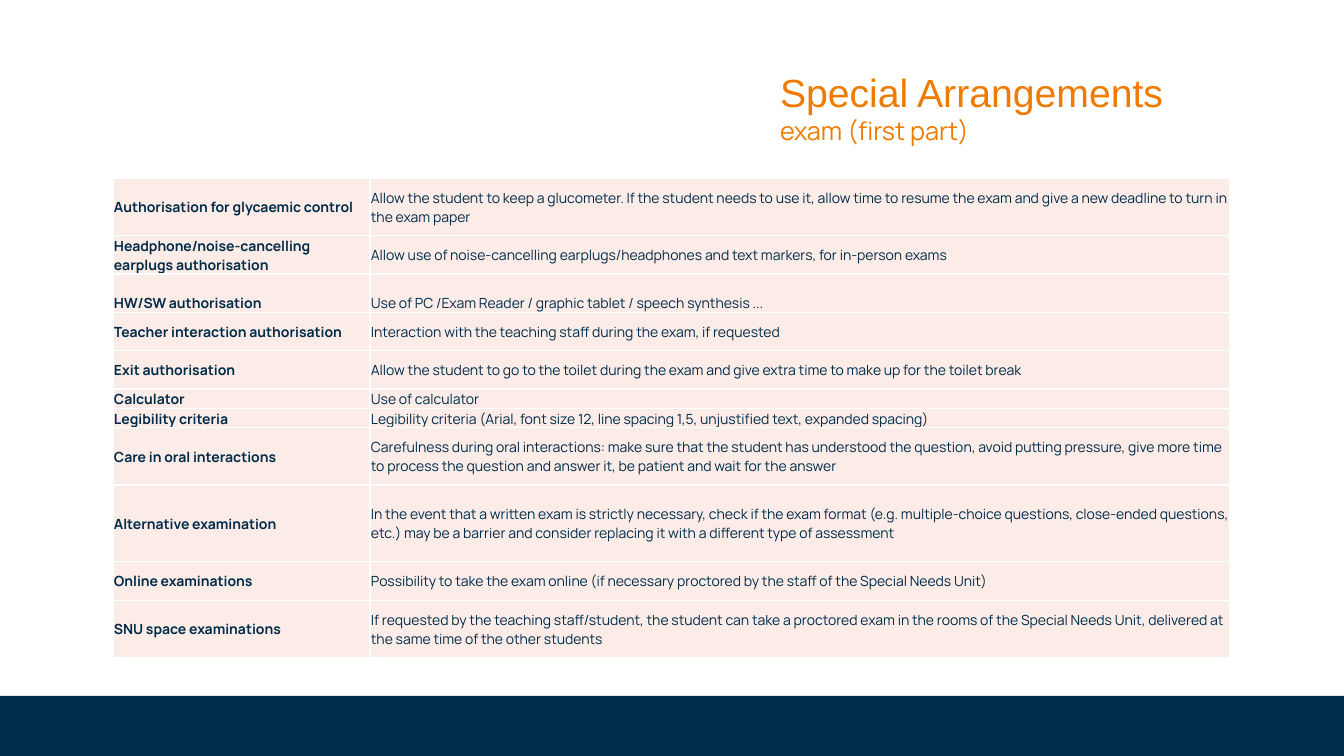
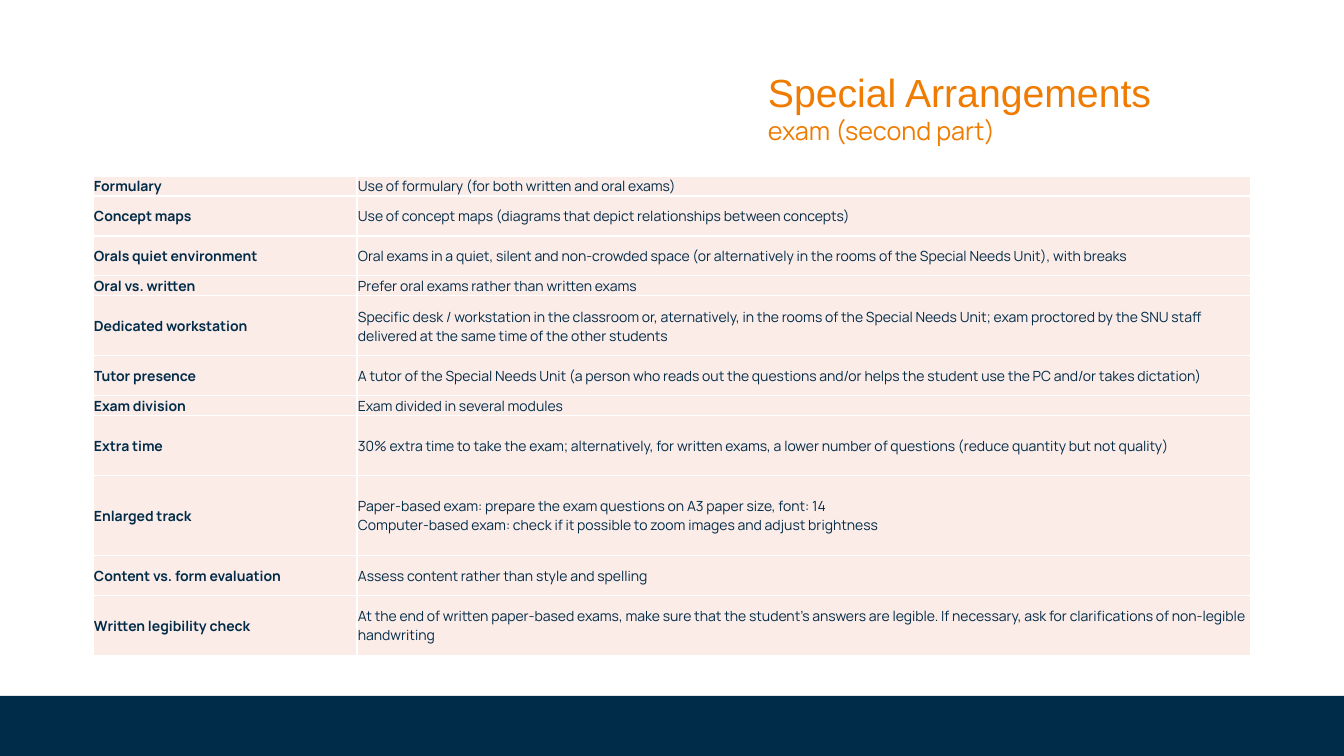
from dataclasses import dataclass

from lxml import etree
from pptx import Presentation
from pptx.dml.color import RGBColor
from pptx.enum.shapes import MSO_SHAPE
from pptx.enum.text import MSO_ANCHOR, MSO_AUTO_SIZE, PP_ALIGN
from pptx.oxml.ns import qn
from pptx.util import Emu, Pt

WIDTH, HEIGHT = 1344, 756
SCALE = 12192000 / WIDTH
BLANK = 6
BAND_TOP = 696
TITLE_TOP, TITLE_HEIGHT = 63, 83
TABLE_HEIGHT = 480

NAVY = RGBColor(0x00, 0x2B, 0x49)
ORANGE = RGBColor(0xEF, 0x7B, 0x00)
BLUSH = RGBColor(0xFC, 0xEC, 0xE7)
WHITE = RGBColor(0xFF, 0xFF, 0xFF)

RECT = MSO_SHAPE.RECTANGLE
MIDDLE, BOTTOM = MSO_ANCHOR.MIDDLE, MSO_ANCHOR.BOTTOM
GROW = MSO_AUTO_SIZE.SHAPE_TO_FIT_TEXT
LEFT = PP_ALIGN.LEFT


@dataclass(frozen=True)
class Row:
    lines: int
    label: str
    detail: str
    anchor: MSO_ANCHOR = MIDDLE


@dataclass(frozen=True)
class Page:
    subtitle: str
    title_left: int
    title_width: int
    table_left: int
    table_top: int
    columns: tuple[int, int]
    rows: list[Row]


FIRST_PART = Page("exam (first part)", 770, 533, 113, 178, (257, 860), [
    Row(3, "Authorisation for glycaemic control",
        "Allow the student to keep a glucometer. If the student needs to use it, "
        "allow time to resume the exam and give a new deadline to turn in the exam paper"),
    Row(2, "Headphone/noise-cancelling earplugs authorisation",
        "Allow use of noise-cancelling earplugs/headphones and text markers, for in-person exams"),
    Row(2, "HW/SW authorisation",
        "Use of PC /Exam Reader / graphic tablet / speech synthesis ...", BOTTOM),
    Row(2, "Teacher interaction authorisation",
        "Interaction with the teaching staff during the exam, if requested"),
    Row(2, "Exit authorisation",
        "Allow the student to go to the toilet during the exam and give extra time "
        "to make up for the toilet break"),
    Row(1, "Calculator", "Use of calculator"),
    Row(1, "Legibility criteria",
        "Legibility criteria (Arial, font size 12, line spacing 1,5, unjustified text, "
        "expanded spacing)"),
    Row(3, "Care in oral interactions",
        "Carefulness during oral interactions: make sure that the student has understood "
        "the question, avoid putting pressure, give more time to process the question "
        "and answer it, be patient and wait for the answer"),
    Row(4, "Alternative examination",
        "In the event that a written exam is strictly necessary, check if the exam format "
        "(e.g. multiple-choice questions, close-ended questions, etc.) may be a barrier "
        "and consider replacing it with a different type of assessment"),
    Row(2, "Online examinations",
        "Possibility to take the exam online (if necessary proctored by the staff "
        "of the Special Needs Unit)"),
    Row(3, "SNU space examinations",
        "If requested by the teaching staff/student, the student can take a proctored exam "
        "in the rooms of the Special Needs Unit, delivered at the same time of the other students"),
])

SECOND_PART = Page("exam (second part)", 758, 544, 93, 176, (264, 894), [
    Row(1, "Formulary", "Use of formulary (for both written and oral exams)"),
    Row(2, "Concept maps",
        "Use of concept maps (diagrams that depict relationships between concepts)"),
    Row(2, "Orals quiet environment",
        "Oral exams in a quiet, silent and non-crowded space (or alternatively "
        "in the rooms of the Special Needs Unit), with breaks"),
    Row(1, "Oral vs. written", "Prefer oral exams rather than written exams"),
    Row(3, "Dedicated workstation",
        "Specific desk / workstation in the classroom or, aternatively, in the rooms "
        "of the Special Needs Unit; exam proctored by the SNU staff delivered "
        "at the same time of the other students"),
    Row(2, "Tutor presence",
        "A tutor of the Special Needs Unit (a person who reads out the questions "
        "and/or helps the student use the PC and/or takes dictation)"),
    Row(1, "Exam division", "Exam divided in several modules"),
    Row(3, "Extra time",
        "30% extra time to take the exam; alternatively, for written exams, "
        "a lower number of questions (reduce quantity but not quality)"),
    Row(4, "Enlarged track",
        "Paper-based exam: prepare the exam questions on A3 paper size, font: 14\n"
        "Computer-based exam: check if it possible to zoom images and adjust brightness"),
    Row(2, "Content vs. form evaluation", "Assess content rather than style and spelling"),
    Row(3, "Written legibility check",
        "At the end of written paper-based exams, make sure that the student's answers "
        "are legible. If necessary, ask for clarifications of non-legible handwriting"),
])


def px(n: float) -> Emu:
    return Emu(round(n * SCALE))


def style(p, font: str, size: int, color: RGBColor, bold: bool = False) -> None:
    for r in p.runs:
        r.font.name = font
        r.font.size = Pt(size)
        r.font.bold = bold
        r.font.color.rgb = color


def add_rect(s, left: int, top: int, width: int, height: int, color: RGBColor):
    sp = s.shapes.add_shape(RECT, px(left), px(top), px(width), px(height))
    sp.shadow.inherit = False
    sp.fill.solid()
    sp.fill.fore_color.rgb = color
    sp.line.fill.background()
    return sp


def add_title(s, page: Page) -> None:
    sp = add_rect(s, page.title_left, TITLE_TOP, page.title_width, TITLE_HEIGHT, WHITE)
    tf = sp.text_frame
    tf.text = f"Special Arrangements\n{page.subtitle}"
    tf.word_wrap = True
    tf.auto_size = GROW
    tf.vertical_anchor = MIDDLE
    tf.margin_left = tf.margin_right = px(10)
    tf.margin_top, tf.margin_bottom = px(5), 0
    for p, font, size in zip(tf.paragraphs, ("Arial", "Manrope"), (28, 18)):
        p.alignment = LEFT
        style(p, font, size, ORANGE)


def add_borders(cell) -> None:
    tc_pr = cell._tc.get_or_add_tcPr()
    for side in ("a:lnL", "a:lnR", "a:lnT", "a:lnB"):
        ln = etree.SubElement(tc_pr, qn(side), w=str(Pt(1)))
        fill = etree.SubElement(ln, qn("a:solidFill"))
        etree.SubElement(fill, qn("a:srgbClr"), val=str(WHITE))


def fill_cell(cell, text: str, anchor: MSO_ANCHOR, bold: bool) -> None:
    cell.text = text
    cell.vertical_anchor = anchor
    cell.margin_left = cell.margin_right = cell.margin_top = px(1)
    cell.margin_bottom = 0
    add_borders(cell)
    cell.fill.solid()
    cell.fill.fore_color.rgb = BLUSH
    for p in cell.text_frame.paragraphs:
        style(p, "Manrope", 10, NAVY, bold)


def add_arrangements(s, page: Page) -> None:
    table = s.shapes.add_table(len(page.rows), len(page.columns), px(page.table_left),
                               px(page.table_top), px(sum(page.columns)),
                               px(TABLE_HEIGHT)).table
    table.first_row = table.horz_banding = False
    for column, width in zip(table.columns, page.columns):
        column.width = px(width)
    line_height = TABLE_HEIGHT / sum(row.lines for row in page.rows)
    for i, row in enumerate(page.rows):
        table.rows[i].height = px(row.lines * line_height)
        fill_cell(table.cell(i, 0), row.label, row.anchor, True)
        fill_cell(table.cell(i, 1), row.detail, row.anchor, False)


def main() -> None:
    prs = Presentation()
    prs.slide_width, prs.slide_height = px(WIDTH), px(HEIGHT)
    for page in (FIRST_PART, SECOND_PART):
        s = prs.slides.add_slide(prs.slide_layouts[BLANK])
        add_rect(s, 0, BAND_TOP, WIDTH, HEIGHT - BAND_TOP, NAVY)
        add_title(s, page)
        add_arrangements(s, page)
    prs.save("out.pptx")


if __name__ == "__main__":
    main()
